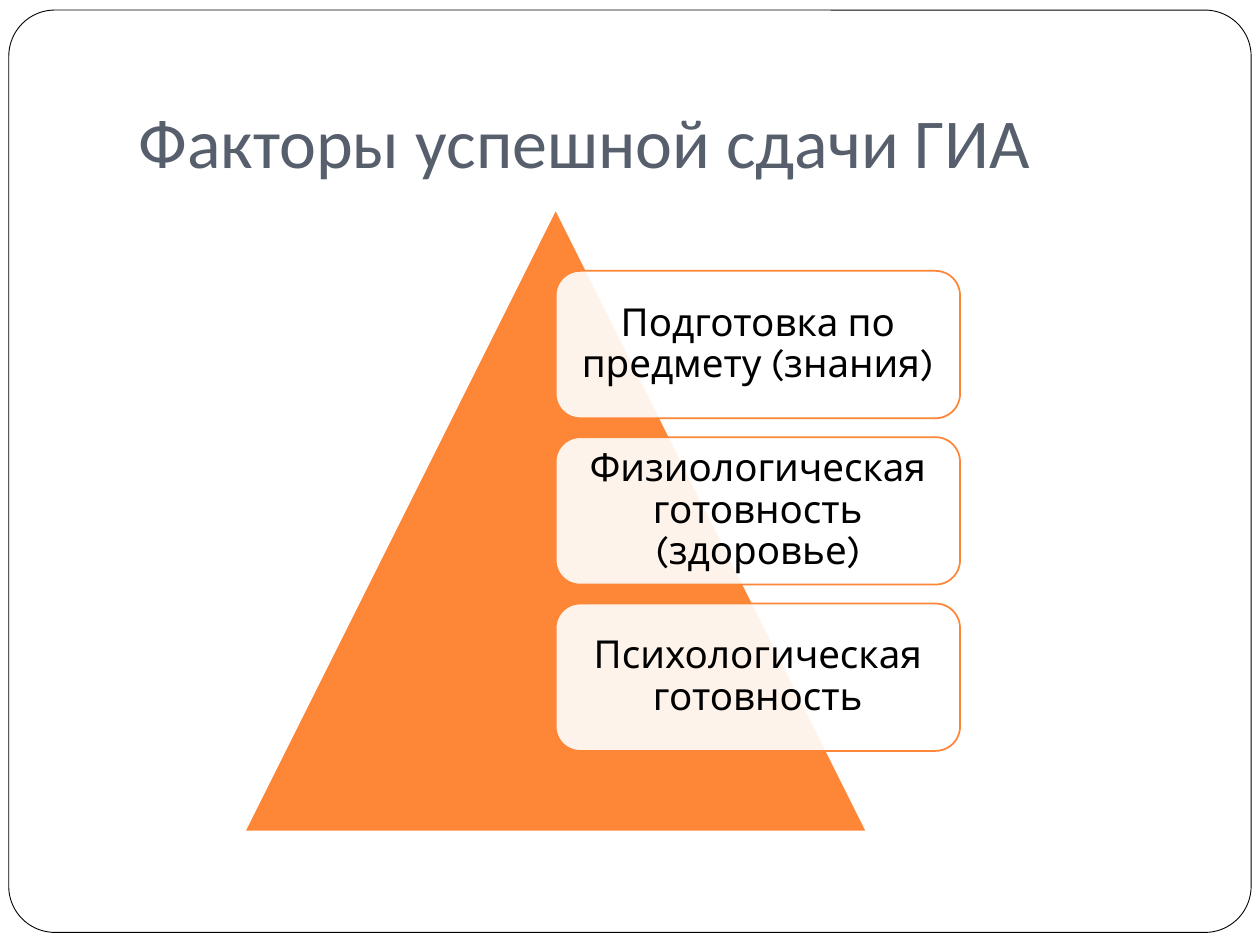
from lxml import etree
from pptx import Presentation
from pptx.dml.color import RGBColor
from pptx.enum.shapes import MSO_SHAPE
from pptx.enum.text import MSO_ANCHOR, PP_ALIGN
from pptx.oxml.ns import qn
from pptx.util import Inches, Pt

ROUNDED = MSO_SHAPE.ROUNDED_RECTANGLE
TRIANGLE = MSO_SHAPE.ISOSCELES_TRIANGLE
MIDDLE = MSO_ANCHOR.MIDDLE
BOTTOM = MSO_ANCHOR.BOTTOM
CENTER = PP_ALIGN.CENTER

WHITE = RGBColor(0xFF, 0xFF, 0xFF)
BLACK = RGBColor(0x00, 0x00, 0x00)
ORANGE = RGBColor(0xFE, 0x86, 0x37)
SLATE = RGBColor(0x57, 0x5F, 0x6D)

FACTORS = [
    "Подготовка по предмету (знания)",
    "Физиологическая готовность (здоровье)",
    "Психологическая готовность",
]
FACTOR_TOP = 2.15
FACTOR_STEP = 1.32


def add_filled_shape(slide, kind, left, top, width, height, fill, line, line_width):
    shape = slide.shapes.add_shape(
        kind, Inches(left), Inches(top), Inches(width), Inches(height)
    )
    shape.shadow.inherit = False
    shape.fill.solid()
    shape.fill.fore_color.rgb = fill
    shape.line.color.rgb = line
    shape.line.width = Pt(line_width)
    return shape


def set_opacity(shape, percent):
    color = shape._element.spPr.find(qn("a:solidFill"))[0]
    etree.SubElement(color, qn("a:alpha")).set("val", str(percent * 1000))


def write_text(shape, text, font_name, size, color, anchor):
    frame = shape.text_frame
    frame.word_wrap = True
    frame.vertical_anchor = anchor
    paragraph = frame.paragraphs[0]
    paragraph.text = text
    paragraph.font.name = font_name
    paragraph.font.size = Pt(size)
    paragraph.font.color.rgb = color
    return frame


def add_title(slide, text):
    box = slide.shapes.add_textbox(Inches(1), Inches(0.3), Inches(8.5), Inches(1.25))
    frame = write_text(box, text, "Calibri", 40, SLATE, BOTTOM)
    frame.margin_bottom = Inches(0.1)


def add_factor(slide, top, text):
    card = add_filled_shape(slide, ROUNDED, 4.41, top, 3.21, 1.17, WHITE, ORANGE, 1)
    set_opacity(card, 90)
    frame = write_text(card, text, "Karla", 22, BLACK, MIDDLE)
    frame.margin_left = frame.margin_right = Inches(0.09)
    frame.margin_top = frame.margin_bottom = Inches(0.09)
    frame.paragraphs[0].alignment = CENTER
    frame.paragraphs[0].line_spacing = 0.9


def main():
    presentation = Presentation()
    presentation.slide_width = Inches(10)
    presentation.slide_height = Inches(7.5)
    slide = presentation.slides.add_slide(presentation.slide_layouts[6])

    border = add_filled_shape(slide, ROUNDED, 0.07, 0.08, 9.86, 7.32, WHITE, BLACK, 0.5)
    border.adjustments[0] = 0.05
    add_title(slide, "Факторы успешной сдачи ГИА")
    add_filled_shape(slide, TRIANGLE, 1.94, 1.66, 4.94, 4.94, ORANGE, WHITE, 1)
    for index, text in enumerate(FACTORS):
        add_factor(slide, FACTOR_TOP + index * FACTOR_STEP, text)

    presentation.save("out.pptx")


if __name__ == "__main__":
    main()
